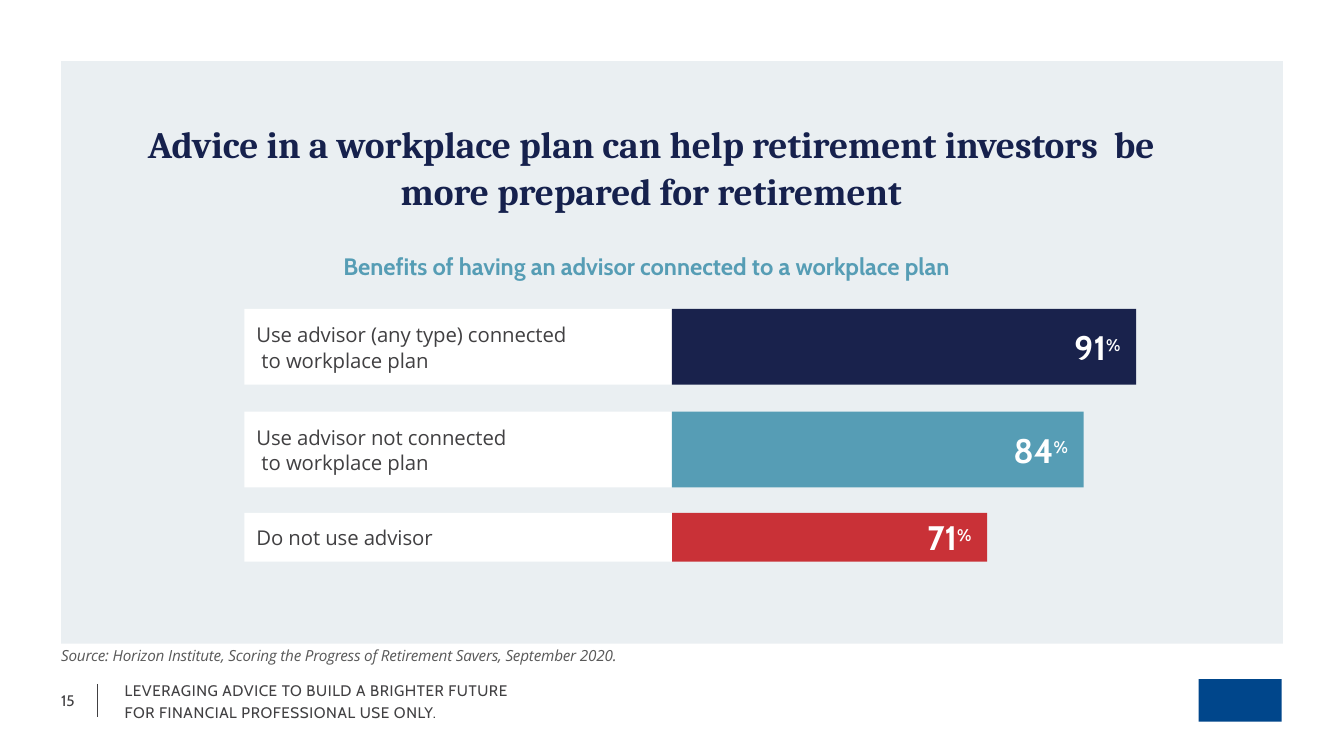
import pptx
import pptx.util
import pptx.dml.color
import pptx.enum.shapes
import pptx.enum.text
import lxml.etree

Inches, Pt = pptx.util.Inches, pptx.util.Pt
ALIGN, ANCHOR = pptx.enum.text.PP_ALIGN, pptx.enum.text.MSO_ANCHOR
NAVY, TEAL, RED, GREY, WHITE = "19224C", "569DB5", "C93137", "414042", "FFFFFF"


def color(hex_code):
    return pptx.dml.color.RGBColor.from_string(hex_code)


def write(box, text, font, size, hex_code, align=ALIGN.LEFT, bold=False, tracking=0):
    """Fill a shape with one paragraph per line and return the paragraphs."""
    frame = box.text_frame
    frame.word_wrap = True
    frame.margin_left = frame.margin_right = frame.margin_top = frame.margin_bottom = 0
    frame.vertical_anchor = ANCHOR.TOP
    frame.text = text
    for para in frame.paragraphs:
        para.alignment = align
        para.font.name, para.font.size, para.font.bold = font, Pt(size), bold
        para.font.color.rgb = color(hex_code)
        for span in para.runs:
            span._r.get_or_add_rPr().set("spc", str(tracking))
    return frame.paragraphs


deck = pptx.Presentation()
deck.slide_width, deck.slide_height = Inches(11), Inches(6.19)
page = deck.slides.add_slide(deck.slide_layouts[5])
shapes = page.shapes

# Background panel and the plain block in the logo's place
for left, top, width, height, fill in [
    (0.5, 0.5, 10, 4.77, "EAEFF2"),
    (9.81, 5.56, 0.68, 0.35, "00468B"),
]:
    block = shapes.add_shape(pptx.enum.shapes.MSO_SHAPE.RECTANGLE,
                             Inches(left), Inches(top), Inches(width), Inches(height))
    block.shadow.inherit = False
    block.fill.solid()
    block.fill.fore_color.rgb = color(fill)
    block.line.fill.background()

# Title, moved in front of the panel
title = shapes.title
shapes._spTree.append(title._element)
title.left, title.top, title.width, title.height = (
    Inches(0.99), Inches(0.96), Inches(8.68), Inches(0.81))
heading = write(title, "Advice in a workplace plan can help retirement investors  be "
                "more prepared for retirement", "Cambria", 22, "16214D", ALIGN.CENTER, True)
title.text_frame.auto_size = pptx.enum.text.MSO_AUTO_SIZE.NONE
title.text_frame.margin_top = Inches(0.01)
heading[0].line_spacing = 1.06

# Subtitle
subtitle = shapes.add_textbox(Inches(0.99), Inches(2.06), Inches(8.6), Inches(0.25))
write(subtitle, "Benefits of having an advisor connected to a workplace plan",
      "Cabin", 14, TEAL, ALIGN.CENTER, True, -7)

# Bars: a white label, then a coloured bar with its value
bars = [
    ("Use advisor (any type) connected\v to workplace plan", "91", 2.53, 0.62, 3.8, NAVY),
    ("Use advisor not connected\v to workplace plan", "84", 3.37, 0.62, 3.37, TEAL),
    ("Do not use advisor", "71", 4.2, 0.4, 2.58, RED),
]
for label, value, top, height, bar_width, bar_fill in bars:
    for left, width, fill in [(2, 3.5, WHITE), (5.5, bar_width, bar_fill)]:
        box = shapes.add_shape(pptx.enum.shapes.MSO_SHAPE.RECTANGLE,
                               Inches(left), Inches(top), Inches(width), Inches(height))
        box.shadow.inherit = False
        box.fill.solid()
        box.fill.fore_color.rgb = color(fill)
        box.line.fill.background()
        if fill == WHITE:
            para = write(box, label, "Open Sans", 12, GREY, tracking=-5)[0]
            para.line_spacing = 1.04 if "\v" in label else 1.0
            box.text_frame.margin_left = Inches(0.1)
        else:
            para = write(box, value, "Cabin", 20, WHITE, ALIGN.RIGHT, True, -5)[0]
            percent = para.add_run()
            percent.text = "%"
            percent.font.size = Pt(17.2)
            percent._r.get_or_add_rPr().set("baseline", "31000")
            box.text_frame.margin_right = Inches(0.13)
        box.text_frame.vertical_anchor = ANCHOR.MIDDLE

# Source note
note = shapes.add_textbox(Inches(0.5), Inches(5.29), Inches(5.06), Inches(0.17))
source = write(note, "Source: Horizon Institute, Scoring the Progress of Retirement Savers, "
               "September 2020.", "Open Sans", 9, "595959", tracking=-10)
source[0].font.italic = True

# Footer: page number, divider, two lines of text
number = shapes.add_textbox(Inches(0.5), Inches(5.66), Inches(0.23), Inches(0.2))
write(number, "15", "Cabin", 9, GREY)

divider = shapes.add_connector(pptx.enum.shapes.MSO_CONNECTOR.STRAIGHT,
                               Inches(0.8), Inches(5.6), Inches(0.8), Inches(5.87))
divider.line.color.rgb = color(GREY)
divider.line.width = Pt(0.4)
lxml.etree.SubElement(divider._element.spPr, pptx.oxml.ns.qn("a:effectLst"))

footer = shapes.add_textbox(Inches(1.02), Inches(5.55), Inches(3.25), Inches(0.36))
for para in write(footer, "LEVERAGING ADVICE TO BUILD A BRIGHTER FUTURE\n"
                  "FOR FINANCIAL PROFESSIONAL USE ONLY.", "Cabin", 9, GREY, tracking=35):
    para.line_spacing = Pt(12.9)
    para.space_before = Pt(0.3)

deck.save("out.pptx")
